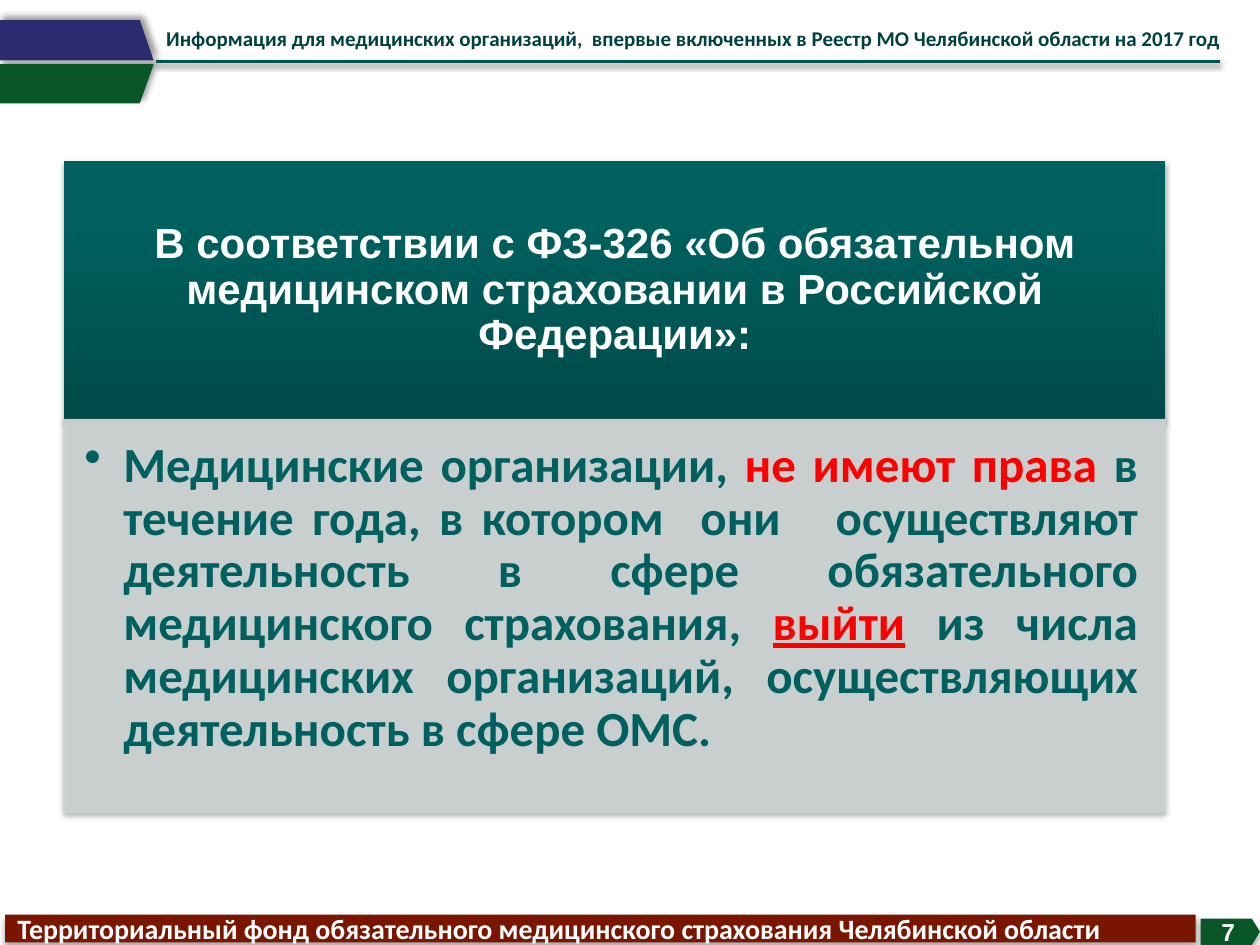
from dataclasses import dataclass

from lxml.etree import SubElement
from pptx import Presentation
from pptx.dml.color import RGBColor
from pptx.enum.shapes import MSO_CONNECTOR, MSO_SHAPE as SHAPE
from pptx.enum.text import MSO_ANCHOR as ANCHOR, PP_ALIGN as ALIGN
from pptx.oxml.ns import qn
from pptx.util import Inches, Pt


@dataclass(frozen=True)
class Theme:
    teal: str = "006060"
    teal_dark: str = "004B49"
    teal_light: str = "00615F"
    rule: str = "005353"
    header: str = "004040"
    panel: str = "CCD3D3"
    navy: str = "2B2C6F"
    green: str = "095729"
    maroon: str = "7A1600"
    red: str = "FF0000"
    white: str = "FFFFFF"
    head_font: str = "Arial"
    body_font: str = "Calibri"
    header_size: int = 12
    title_size: int = 24
    body_size: int = 28
    footer_size: int = 16
    number_size: int = 14


# Shadows: opacity %, blur pt, distance pt, direction in degrees
TAB_SHADOW = (40, 4, 3, 315)
RULE_SHADOW = (38, 3.1, 1.6, 90)
PANEL_SHADOW = (35, 3.1, 1.8, 90)
FOOTER_SHADOW = (32, 3.5, 2.2, 90)


class SlideBuilder:
    def __init__(self, slide, theme):
        self.shapes = slide.shapes
        self.theme = theme

    def shadow(self, sp, alpha, blur, dist, angle):
        """Give a shape or connector an outer shadow."""
        sp_pr = sp._element.spPr
        effects = sp_pr.find(qn("a:effectLst"))
        if effects is None:
            effects = SubElement(sp_pr, qn("a:effectLst"))
        outer = SubElement(effects, qn("a:outerShdw"), blurRad=str(Pt(blur)),
                           dist=str(Pt(dist)), dir=str(angle * 60000), rotWithShape="0")
        color = SubElement(outer, qn("a:srgbClr"), val="000000")
        SubElement(color, qn("a:alpha"), val=str(alpha * 1000))

    def finish(self, sp, color, shadow):
        """Plain fill, no outline, given shadow."""
        sp.fill.solid()
        sp.fill.fore_color.rgb = RGBColor.from_string(color)
        sp.line.fill.background()
        sp.shadow.inherit = False
        self.shadow(sp, *shadow)
        return sp

    def box(self, kind, x, y, w, h, color, shadow):
        sp = self.shapes.add_shape(kind, Inches(x), Inches(y), Inches(w), Inches(h))
        return self.finish(sp, color, shadow)

    def polygon(self, points, color, shadow):
        pts = [(Inches(x), Inches(y)) for x, y in points]
        fb = self.shapes.build_freeform(*pts[0])
        fb.add_line_segments(pts[1:], close=True)
        return self.finish(fb.convert_to_shape(), color, shadow)

    def rule(self, x1, x2, y, color, width, shadow):
        line = self.shapes.add_connector(
            MSO_CONNECTOR.STRAIGHT, Inches(x1), Inches(y), Inches(x2), Inches(y))
        line.line.color.rgb = RGBColor.from_string(color)
        line.line.width = Pt(width)
        self.shadow(line, *shadow)

    def gradient(self, sp, start, end, end_at, angle):
        sp.fill.gradient()
        sp.fill.gradient_angle = angle
        for stop, color, pos in zip(sp.fill.gradient_stops, (start, end), (0, end_at)):
            stop.color.rgb = RGBColor.from_string(color)
            stop.position = pos

    def translucent(self, sp, color, alpha):
        """Outline in the fill colour, both with the same opacity."""
        sp.line.color.rgb = RGBColor.from_string(color)
        sp.line.width = Pt(0.75)
        for clr in sp._element.spPr.iterfind(".//" + qn("a:solidFill") + "/" + qn("a:srgbClr")):
            SubElement(clr, qn("a:alpha"), val=str(alpha * 1000))

    def textbox(self, x, y, w, h):
        return self.shapes.add_textbox(Inches(x), Inches(y), Inches(w), Inches(h))

    def text(self, sp, runs, size, font, color, align=ALIGN.LEFT, anchor=ANCHOR.MIDDLE,
             insets=(0.1, 0.05, 0.1, 0.05), spacing=None, bullet=None):
        """Write one bold paragraph; runs are (text, colour, underline)."""
        tf = sp.text_frame
        tf.word_wrap = True
        tf.vertical_anchor = anchor
        tf.margin_left, tf.margin_top, tf.margin_right, tf.margin_bottom = map(Inches, insets)
        p = tf.paragraphs[0]
        p.alignment = align
        p.line_spacing = spacing
        if bullet:
            self.bullet(p, bullet)
        p.font.size, p.font.name, p.font.bold = Pt(size), font, True
        p.font.color.rgb = RGBColor.from_string(color)
        for text, run_color, underline in runs:
            r = p.add_run()
            r.text = text
            r.font.color.rgb = RGBColor.from_string(run_color)
            if underline:
                r.font.underline = True

    def bullet(self, p, indent):
        p_pr = p._p.get_or_add_pPr()
        p_pr.set("marL", str(Inches(indent)))
        p_pr.set("indent", str(-Inches(indent)))
        SubElement(p_pr, qn("a:buChar"), char="•")


def main():
    prs = Presentation()
    prs.slide_width, prs.slide_height = Inches(10), Inches(7.5)
    t = Theme()
    s = SlideBuilder(prs.slides.add_slide(prs.slide_layouts[6]), t)

    # Header tabs, rule and caption
    s.polygon([(-0.01, 0.51), (1.22, 0.51), (1.11, 0.82), (-0.01, 0.82)], t.green, TAB_SHADOW)
    s.polygon([(-0.01, 0.16), (1.11, 0.16), (1.22, 0.48), (-0.01, 0.48)], t.navy, TAB_SHADOW)
    s.rule(1.24, 9.68, 0.49, t.rule, 2, RULE_SHADOW)
    caption = ("Информация для медицинских организаций,  впервые включенных "
               "в Реестр МО Челябинской области на 2017 год")
    s.text(s.textbox(1.22, 0.15, 8.78, 0.61), [(caption, t.header, False)],
           t.header_size, t.body_font, t.header, anchor=ANCHOR.TOP)

    # Title panel
    left, top, width, title_h, body_h = 0.51, 1.28, 8.74, 2.05, 3.12
    title = s.box(SHAPE.RECTANGLE, left, top, width, title_h, t.teal_light, PANEL_SHADOW)
    s.gradient(title, t.teal_dark, t.teal_light, 0.8, 90)
    heading = "В соответствии с ФЗ-326 «Об обязательном медицинском страховании в Российской Федерации»:"
    s.text(title, [(heading, t.white, False)], t.title_size, t.head_font, t.white,
           ALIGN.CENTER, insets=(0.19, 0.11, 0.19, 0.11), spacing=0.9)

    # Body panel
    body = s.box(SHAPE.RECTANGLE, left, top + title_h, width, body_h, t.panel, PANEL_SHADOW)
    s.translucent(body, t.panel, 90)
    runs = [
        ("Медицинские организации, ", t.teal, False),
        ("не имеют права ", t.red, False),
        ("в течение года, в котором  они   осуществляют деятельность в сфере "
         "обязательного медицинского страхования, ", t.teal, False),
        ("выйти", t.red, True),
        (" из числа медицинских организаций, осуществляющих деятельность в сфере ОМС.",
         t.teal, False),
    ]
    s.text(body, runs, t.body_size, t.body_font, t.teal, ALIGN.JUSTIFY, ANCHOR.TOP,
           insets=(0.16, 0.16, 0.22, 0.24), spacing=0.9, bullet=0.31)

    # Footer band and page number
    footer = s.box(SHAPE.RECTANGLE, 0.04, 7.26, 9.45, 0.22, t.maroon, FOOTER_SHADOW)
    fund = "Территориальный фонд обязательного медицинского страхования Челябинской области"
    s.text(footer, [(fund, t.white, False)], t.footer_size, t.body_font, t.white)
    number = s.box(SHAPE.PENTAGON, 9.53, 7.29, 0.47, 0.21, t.green, FOOTER_SHADOW)
    number.adjustments[0] = 0.31
    s.text(number, [("7", t.white, False)], t.number_size, t.head_font, t.white, ALIGN.CENTER)

    prs.save("out.pptx")


if __name__ == "__main__":
    main()
